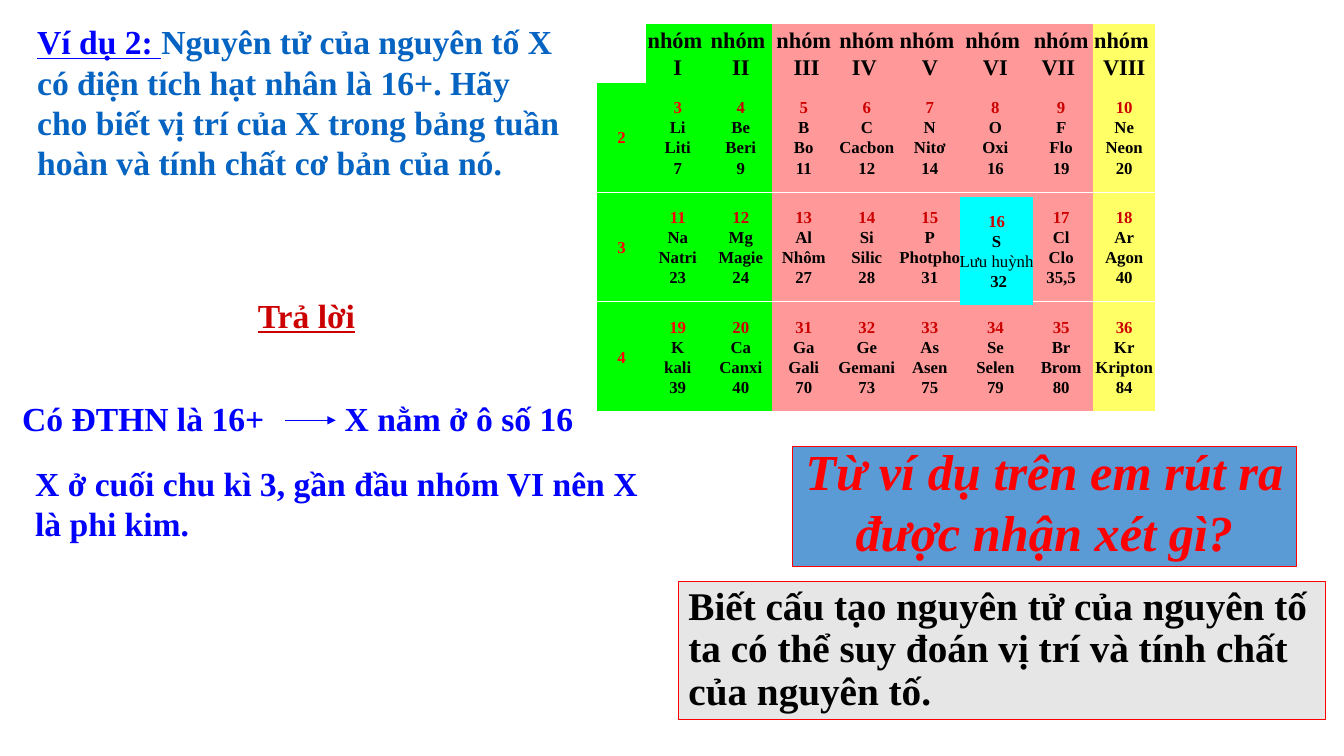
"""Build the slide on placing element X in the periodic table."""
from lxml import etree
from pptx import Presentation
from pptx.dml.color import RGBColor
from pptx.enum.shapes import MSO_CONNECTOR, MSO_SHAPE
from pptx.enum.text import MSO_ANCHOR, MSO_AUTO_SIZE, PP_ALIGN
from pptx.oxml.ns import qn
from pptx.util import Inches, Pt

CELL, RECT = MSO_SHAPE.ACTION_BUTTON_CUSTOM, MSO_SHAPE.RECTANGLE
LINE = MSO_CONNECTOR.STRAIGHT
TOP, MIDDLE, BOTTOM = MSO_ANCHOR.TOP, MSO_ANCHOR.MIDDLE, MSO_ANCHOR.BOTTOM
LEFT, CENTER = PP_ALIGN.LEFT, PP_ALIGN.CENTER
GROW = MSO_AUTO_SIZE.SHAPE_TO_FIT_TEXT

BLACK = RGBColor(0x00, 0x00, 0x00)
RED = RGBColor(0xFF, 0x00, 0x00)
DARK = RGBColor(0xCC, 0x00, 0x00)
BLUE = RGBColor(0x00, 0x00, 0xFF)
LINK = RGBColor(0x05, 0x63, 0xC1)
SKY = RGBColor(0x5B, 0x9B, 0xD5)
GRAY = RGBColor(0xE7, 0xE6, 0xE6)
GREEN = RGBColor(0x00, 0xFF, 0x00)
PINK = RGBColor(0xFF, 0x99, 0x99)
YELLOW = RGBColor(0xFF, 0xFF, 0x66)
CYAN = RGBColor(0x00, 0xFF, 0xFF)

HEADS = ["nhóm \nI", "nhóm \nII", "nhóm\n III", "nhóm\nIV ",
         "nhóm \nV", "nhóm \nVI", "nhóm\nVII ", "nhóm \nVIII"]
ROWS = {
    "2": ["3 Li Liti 7", "4 Be Beri 9", "5 B Bo 11", "6 C Cacbon 12",
          "7 N Nitơ 14", "8 O Oxi 16", "9 F Flo 19", "10 Ne Neon 20"],
    "3": ["11 Na Natri 23", "12 Mg Magie 24", "13 Al Nhôm 27", "14 Si Silic 28",
          "15 P Photpho 31", "", "17 Cl Clo 35,5", "18 Ar Agon 40"],
    "4": ["19 K kali 39", "20 Ca Canxi 40", "31 Ga Gali 70", "32 Ge Gemani 73",
          "33 As Asen 75", "34 Se Selen 79", "35 Br Brom 80", "36 Kr Kripton 84"],
}
FILLS = [GREEN] * 2 + [PINK] * 5 + [YELLOW]
STUB, HEAD, FIRST = 5.92, 0.24, 0.82
TALL, PITCH = 1.08, 1.09
EDGES = [6.41 + 5 * col / 8 for col in range(6)] + [10.21, 10.84, 11.46]


class Board:
    """Hold the text style and the current slide."""

    def __init__(self, slide, font):
        self.slide = slide
        self.base = {"name": font, "bold": True}

    def text(self, shape, paras, align=LEFT, space=None, **frame):
        """Fill a shape with paragraphs, each a list of (text, format) runs."""
        body = shape.text_frame
        for key, val in frame.items():
            setattr(body, key, val)
        for num, runs in enumerate(paras):
            para = body.add_paragraph() if num else body.paragraphs[0]
            para.alignment = align
            if space:
                para.line_spacing = space
            for words, style in runs:
                run = para.add_run()
                run.text = words
                for key, val in {**self.base, **style}.items():
                    if key == "color":
                        run.font.color.rgb = val
                    else:
                        setattr(run.font, key, val)

    def note(self, box, *runs):
        """Add a text box with one paragraph."""
        shape = self.slide.shapes.add_textbox(*map(Inches, box))
        self.text(shape, [runs], word_wrap=True, auto_size=GROW)

    def block(self, kind, box, fill, paras, edge=None, **frame):
        """Add a preset shape with text."""
        shape = self.slide.shapes.add_shape(kind, *map(Inches, box))
        shape.shadow.inherit = False
        if fill is None:
            shape.fill.background()
        else:
            shape.fill.solid()
            shape.fill.fore_color.rgb = fill
        if edge is None:
            shape.line.fill.background()
        else:
            shape.line.color.rgb = edge
            shape.line.width = Pt(0.75)
        self.text(shape, paras, **frame)

    def cell(self, box, fill, paras):
        """Add one cell with centred text that does not wrap."""
        self.block(CELL, box, fill, paras, align=CENTER,
                   vertical_anchor=MIDDLE, word_wrap=False)

    def arrow(self, start, end, color):
        """Add a straight arrow."""
        line = self.slide.shapes.add_connector(LINE, *map(Inches, start + end))
        line.line.color.rgb = color
        line.line.width = Pt(0.75)
        props = line._element.spPr
        etree.SubElement(props.find(qn("a:ln")), qn("a:tailEnd"), type="triangle")
        etree.SubElement(props, qn("a:effectLst"))


def atom(lines, color):
    """Make cell paragraphs with a coloured number on top."""
    return [[(words, {"size": Pt(12), "color": BLACK if num else color})]
            for num, words in enumerate(lines)]


def main():
    """Draw the slide and save it."""
    deck = Presentation()
    deck.slide_width, deck.slide_height = Inches(13.33), Inches(7.5)
    board = Board(deck.slides.add_slide(deck.slide_layouts[6]), "Times New Roman")
    blue = {"size": Pt(24), "color": BLUE}

    board.note((0.27, 0.16, 5.44, 1.72),
               ("Ví dụ 2: ", {**blue, "underline": True}),
               ("Nguyên tử của nguyên tố X có điện tích hạt nhân là 16+. Hãy cho "
                "biết vị trí của X trong bảng tuần hoàn và tính chất cơ bản của nó.",
                {**blue, "color": LINK}))

    spans = [(left, end - left) for left, end in zip(EDGES, EDGES[1:])]
    for (left, wide), fill, head in zip(spans, FILLS, HEADS):
        board.cell((left, HEAD, wide, FIRST - HEAD), fill,
                   [[(words, {"size": Pt(16), "color": BLACK})]
                    for words in head.split("\n")])
    for row, (label, atoms) in enumerate(ROWS.items()):
        top = FIRST + PITCH * row
        board.cell((STUB, top, EDGES[0] - STUB, TALL), GREEN, atom([label], RED))
        for col, ((left, wide), fill, words) in enumerate(zip(spans, FILLS, atoms)):
            board.cell((left, top, wide, TALL), fill,
                       atom(words.split(), DARK if col else RED))
    sulfur = atom(["16", "S", "Lưu huỳnh", " 32"], DARK)
    sulfur[2][0][1]["bold"] = False
    board.cell((9.52, 1.95, 0.73, TALL), CYAN, sulfur)

    board.cell((2.58, 2.75, 0.92, 0.75), None,
               [[("Trả lời", {"size": Pt(24), "color": DARK, "underline": True})]])
    board.note((0.12, 3.9, 2.92, 0.5), ("Có ĐTHN là 16+", blue))
    board.arrow((2.83, 4.17), (3.33, 4.17), BLUE)
    board.note((3.32, 3.9, 3.17, 0.5), ("X nằm ở ô số 16", blue))
    board.note((0.25, 4.54, 6.25, 0.91),
               ("X ở cuối chu kì 3, gần đầu nhóm VI nên X là phi kim.", blue))

    board.block(RECT, (7.86, 4.43, 5, 1.19), SKY,
                [[("Từ ví dụ trên em rút ra được nhận xét gì?",
                   {"size": Pt(36), "color": RED, "italic": True})]],
                edge=RED, align=CENTER, vertical_anchor=BOTTOM, word_wrap=True)
    board.block(RECT, (6.73, 5.77, 6.42, 1.37), GRAY,
                [[("Biết cấu tạo nguyên tử của nguyên tố ta có thể suy đoán vị trí "
                   "và tính chất của nguyên tố.", {"size": Pt(28), "color": BLACK})]],
                edge=RED, space=0.9, vertical_anchor=TOP, word_wrap=True,
                auto_size=GROW)
    deck.save("out.pptx")


if __name__ == "__main__":
    main()
